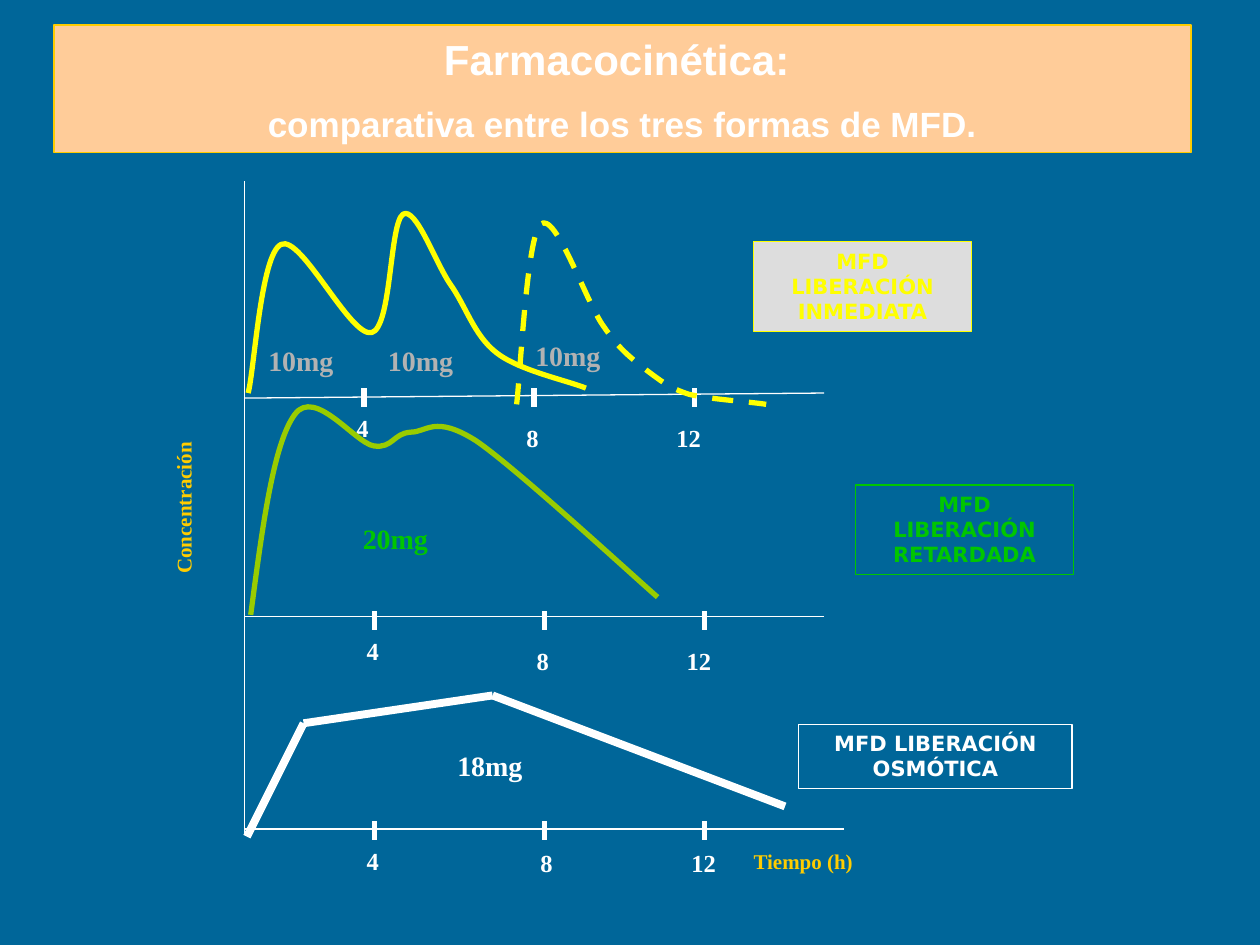
from lxml.etree import SubElement
from pptx import Presentation
from pptx.dml.color import RGBColor
from pptx.enum.dml import MSO_LINE
from pptx.enum.shapes import MSO_CONNECTOR, MSO_SHAPE
from pptx.enum.text import MSO_ANCHOR, MSO_AUTO_SIZE, PP_ALIGN
from pptx.oxml.ns import qn
from pptx.util import Pt

SERIF = "Times New Roman"
WHITE, YELLOW, GOLD, GREEN, GREY = "FFFFFF", "FFFF00", "FFCC00", "00C600", "B2B2B2"
TICK_STEPS = (0, 97.2, 188.7)
TICK_HEIGHT = 10.8
HOURS = (("4", 23, 11.4), ("8", 23, 11.5), ("12", 40, 17.3))

FIRST_DOSES = [
    (2.1, 120.9),
    (5.7, 107.3), (9.3, 41.7), (20.9, 36),
    (32.4, 30.2), (60.5, 89.3), (72.7, 86.4),
    (84.2, 83.5), (82.8, 23.7), (90.7, 18.7),
    (97.9, 14.4), (108.7, 45.3), (117.3, 58.3),
    (126.7, 71.3), (131, 87.8), (144, 97.9),
    (156.9, 108), (184.3, 113.7), (195.1, 118.1),
]
THIRD_DOSE = [
    (155.5, 127.4),
    (157.7, 110.1), (161.3, 31.7), (169.2, 24.5),
    (177.8, 16.5), (195.1, 69.1), (205.2, 82.8),
    (214.5, 96.5), (221, 100.8), (228.9, 107.3),
    (237.6, 113.7), (242.6, 118.1), (254.1, 121.7),
    (265.7, 124.5), (289.4, 126), (298.1, 127.4),
]
DELAYED_DOSE = [
    (3.6, 135.4),
    (10.1, 86.4), (16.5, 37.4), (28.8, 20.9),
    (40.3, 5), (63.3, 37.4), (74.1, 38.9),
    (84.9, 40.3), (84.9, 31.7), (95, 31),
    (104.4, 31), (108.7, 20.9), (132.5, 36),
    (155.5, 51.8), (218.9, 110.2), (236.1, 125.3),
]
OSMOTIC_DOSE = [(1.4, 141.1), (33.8, 76.3), (141.8, 60.4), (308.9, 123.8)]


def color(value):
    return RGBColor.from_string(value)


def style_text(para, size, font, ink):
    para.font.size = Pt(size)
    para.font.name = font
    para.font.bold = True
    para.font.color.rgb = color(ink)


def outline(shape, ink, width):
    shape.line.color.rgb = color(ink)
    shape.line.width = Pt(width)


def add_text(page, text, left, top, width, height, size, ink):
    box = page.shapes.add_textbox(Pt(left), Pt(top), Pt(width), Pt(height))
    box.text_frame.word_wrap = True
    para = box.text_frame.paragraphs[0]
    para.text = text
    style_text(para, size, SERIF, ink)
    return box


def add_axis_title(page, text, left, top, width, rotation=0):
    box = add_text(page, text, left, top, width, 14.4, 12, GOLD)
    box.rotation = rotation
    frame = box.text_frame
    frame.word_wrap = False
    frame.margin_left = frame.margin_right = frame.margin_top = frame.margin_bottom = 0


def add_line(page, start, end, width):
    line = page.shapes.add_connector(
        MSO_CONNECTOR.STRAIGHT, *(Pt(value) for value in (*start, *end)))
    outline(line, WHITE, width)
    SubElement(line._element.spPr, qn("a:effectLst"))


def add_curve(shapes, left, top, points, ink):
    """Draw a start point followed by triples of Bézier control points."""
    start, *controls = [(Pt(left + x), Pt(top + y)) for x, y in points]
    builder = shapes.build_freeform(*start)
    builder.add_line_segments(controls, close=False)
    curve = builder.convert_to_shape()
    segments = list(curve._element.iter(qn("a:lnTo")))
    for index in range(0, len(segments), 3):
        bezier = SubElement(segments[index].getparent(), qn("a:cubicBezTo"))
        for segment in segments[index:index + 3]:
            bezier.append(segment[0])
            segment.getparent().remove(segment)
    curve.shadow.inherit = False
    curve.fill.background()
    outline(curve, ink, 3)
    return curve


def add_axes(page, left, top, width, height, baseline, ticks, label_drop, label_shift=(0, 0, 0)):
    """baseline: start and end y; ticks: first x and top y; all relative to the panel."""
    add_line(page, (left, top), (left, top + height), 0.75)
    add_line(page, (left + width, top + baseline[1]), (left, top + baseline[0]), 0.75)
    tick_top = top + ticks[1]
    drops = (TICK_HEIGHT, label_drop, label_drop)
    for step, (hour, label_width, offset), drop, shift in zip(
            TICK_STEPS, HOURS, drops, label_shift):
        x = left + ticks[0] + step
        add_line(page, (x, tick_top), (x, tick_top + TICK_HEIGHT), 3)
        add_text(page, hour, x - offset + shift, tick_top + drop, label_width, 23.8, 14, WHITE)


def add_dose(page, text, left, top, ink):
    add_text(page, text, left, top, 62, 26.6, 16, ink)


def add_tag(page, text, left, top, width, height, ink, fill=None):
    tag = page.shapes.add_shape(
        MSO_SHAPE.RECTANGLE, Pt(left), Pt(top), Pt(width), Pt(height))
    tag.shadow.inherit = False
    outline(tag, ink, 0.75)
    if fill:
        tag.fill.solid()
        tag.fill.fore_color.rgb = color(fill)
    else:
        tag.fill.background()
    frame = tag.text_frame
    frame.word_wrap = True
    frame.vertical_anchor = MSO_ANCHOR.TOP
    para = frame.paragraphs[0]
    para.text = text
    para.alignment = PP_ALIGN.CENTER
    style_text(para, 12, "DejaVu Sans", ink)


def add_immediate_panel(page, left, top):
    add_axes(page, left, top, 331.2, 124.5, (123.8, 120.9), (68.3, 118.1), 16.2)
    for x, y in ((6.5, 89.3), (74.9, 89.3), (159.1, 86.4)):
        add_dose(page, "10mg", left + x, top + y, GREY)
    add_tag(page, "MFD LIBERACIÓN INMEDIATA", left + 290.9, top + 34.5, 124.6, 51.1,
            YELLOW, "DDDDDD")
    group = page.shapes.add_group_shape()
    add_curve(group.shapes, left, top, FIRST_DOSES, YELLOW)
    third = add_curve(group.shapes, left, top, THIRD_DOSE, YELLOW)
    third.line.dash_style = MSO_LINE.DASH


def add_delayed_panel(page, left, top):
    add_axes(page, left, top, 331.2, 139.5, (136.1, 136.1), (74.1, 133.2), 16.2)
    add_tag(page, "MFD LIBERACIÓN RETARDADA", left + 349.2, top + 61.2, 124.6, 51.1, GREEN)
    add_curve(page.shapes, left, top, DELAYED_DOSE, "99CC00")
    add_dose(page, "20mg", left + 60.5, top + 78.5, GREEN)


def add_osmotic_panel(page, left, top):
    add_axes(page, left, top, 342.7, 139, (136.8, 136.8), (74.1, 132.4), 11.6, (0, 2.2, 2.8))
    add_dose(page, "18mg", left + 114.5, top + 87.1, WHITE)
    points = [(left + x, top + y) for x, y in OSMOTIC_DOSE]
    for start, end in zip(points, points[1:]):
        add_line(page, start, end, 4.5)
    add_tag(page, "MFD LIBERACIÓN OSMÓTICA", left + 316.8, top + 77, 156.2, 36.7, WHITE)


def add_title(page, left, top, width, height):
    title = page.shapes.title
    title.left, title.top, title.width, title.height = map(Pt, (left, top, width, height))
    title.fill.solid()
    title.fill.fore_color.rgb = color("FFCC99")
    outline(title, GOLD, 1)
    frame = title.text_frame
    frame.text = "Farmacocinética: \ncomparativa entre los tres formas de MFD."
    frame.word_wrap = True
    frame.auto_size = MSO_AUTO_SIZE.NONE
    frame.vertical_anchor = MSO_ANCHOR.MIDDLE
    for para, size, gap in zip(frame.paragraphs, (24, 20), (0, 10.5)):
        para.alignment = PP_ALIGN.CENTER
        para.space_before = Pt(gap)
        style_text(para, size, "Arial", WHITE)


def main():
    deck = Presentation()
    deck.slide_width, deck.slide_height = Pt(720), Pt(540)
    page = deck.slides.add_slide(deck.slide_layouts[5])
    page.background.fill.solid()
    page.background.fill.fore_color.rgb = color("006699")
    add_title(page, 31, 14.4, 649.4, 72.7)
    axis_left = 139.7
    add_immediate_panel(page, axis_left, 103.7)
    add_delayed_panel(page, axis_left, 216)
    add_osmotic_panel(page, axis_left, 337)
    add_axis_title(page, "Tiempo (h)", 430.6, 484.6, 58.3)
    add_axis_title(page, "Concentración", 66.2, 282.2, 77, 270)
    deck.save("out.pptx")


if __name__ == "__main__":
    main()
